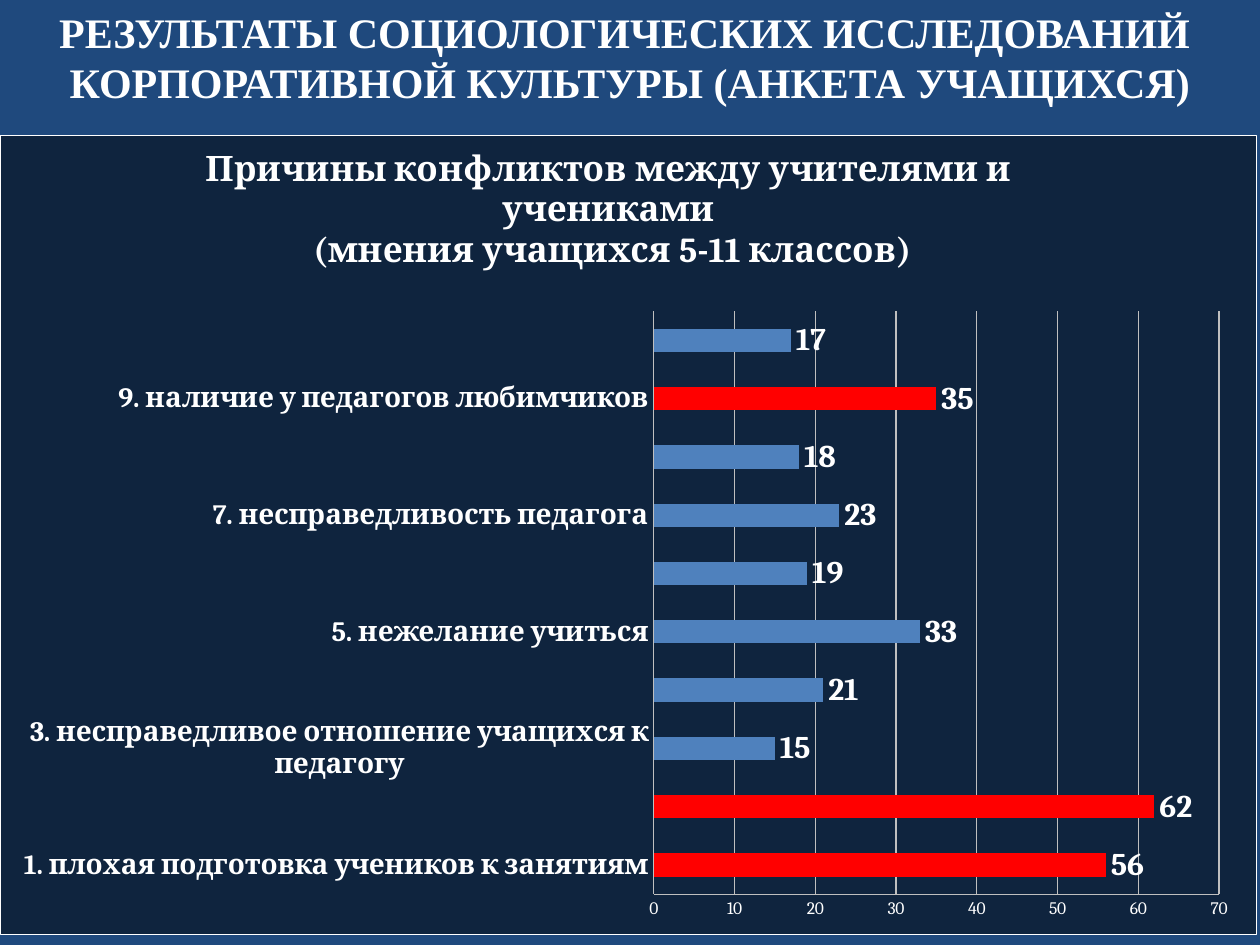
import lxml.etree
import pptx
import pptx.chart.data
import pptx.dml.color
import pptx.enum.chart
import pptx.enum.text
import pptx.oxml
import pptx.oxml.ns
import pptx.util

Inches = pptx.util.Inches
Pt = pptx.util.Pt
qn = pptx.oxml.ns.qn

COLORS = {
    "background": "1F497D",
    "panel": "0F243E",
    "text": "FFFFFF",
    "grid": "BFBFBF",
    "bar": "4F81BD",
    "highlight": "FF0000",
}
REASONS = [
    ("1. плохая подготовка учеников к занятиям", 56),
    ("", 62),
    ("3. несправедливое отношение учащихся к педагогу", 15),
    ("", 21),
    ("5. нежелание учиться", 33),
    ("", 19),
    ("7. несправедливость педагога", 23),
    ("", 18),
    ("9. наличие у педагогов любимчиков", 35),
    ("", 17),
]
HIGHLIGHT_FROM = 35


def rgb(name):
    """Return the named palette colour."""
    return pptx.dml.color.RGBColor.from_string(COLORS[name])


def format_font(font, size, face="Cambria", bold=False, color="text"):
    """Apply size, face, weight and colour to a font."""
    font.size = Pt(size)
    font.name = face
    font.bold = bold
    font.color.rgb = rgb(color)


def write_text(frame, lines, **font_format):
    """Write centred lines as paragraphs with one font format."""
    frame.clear()
    for index, line in enumerate(lines):
        paragraph = frame.paragraphs[0] if index == 0 else frame.add_paragraph()
        paragraph.alignment = pptx.enum.text.PP_ALIGN.CENTER
        run = paragraph.add_run()
        run.text = line
        format_font(run.font, **font_format)


def set_layout(parent, index, inner=False, **fractions):
    """Fix the place of a chart part as fractions of the chart."""
    for previous in parent.findall(qn("c:layout")):
        parent.remove(previous)
    layout = lxml.etree.Element(qn("c:layout"))
    manual = lxml.etree.SubElement(layout, qn("c:manualLayout"))
    settings = {"layoutTarget": "inner"} if inner else {}
    settings.update(xMode="edge", yMode="edge", **fractions)
    for tag, value in settings.items():
        lxml.etree.SubElement(manual, qn("c:" + tag)).set("val", str(value))
    parent.insert(index, layout)


def paint_panel(chart):
    """Give the chart area its fill and border."""
    namespaces = pptx.oxml.ns.nsdecls("c", "a")
    chart_space = chart.element
    panel = pptx.oxml.parse_xml(
        f"<c:spPr {namespaces}>"
        f'<a:solidFill><a:srgbClr val="{COLORS["panel"]}"/></a:solidFill>'
        f'<a:ln w="{Pt(0.75)}"><a:solidFill><a:srgbClr val="{COLORS["text"]}"/>'
        "</a:solidFill></a:ln></c:spPr>"
    )
    chart_space.find(qn("c:chart")).addnext(panel)


def format_axes(chart):
    """Format the reason axis and the value axis."""
    for axis, size, bold in (
        (chart.category_axis, 16, True),
        (chart.value_axis, 10, False),
    ):
        axis.major_tick_mark = pptx.enum.chart.XL_TICK_MARK.NONE
        axis.minor_tick_mark = pptx.enum.chart.XL_TICK_MARK.NONE
        axis.format.line.color.rgb = rgb("grid")
        format_font(axis.tick_labels.font, size, bold=bold)
    values = chart.value_axis
    values.minimum_scale, values.maximum_scale, values.major_unit = 0, 70, 10
    values.has_major_gridlines = True
    values.major_gridlines.format.line.color.rgb = rgb("grid")
    values.major_gridlines.format.line.width = Pt(0.75)
    values.tick_labels.number_format = "0"
    values.tick_labels.number_format_is_linked = False
    chart.category_axis.has_major_gridlines = False


def format_bars(plot):
    """Colour the bars and label them with their values."""
    plot.gap_width = 150
    plot.vary_by_categories = False
    series = plot.series[0]
    series.invert_if_negative = False
    series.format.fill.solid()
    series.format.fill.fore_color.rgb = rgb("bar")
    for index, (_, value) in enumerate(REASONS):
        if value >= HIGHLIGHT_FROM:
            fill = series.points[index].format.fill
            fill.solid()
            fill.fore_color.rgb = rgb("highlight")
    labels = series.data_labels
    labels.show_value = True
    labels.number_format = "0"
    labels.number_format_is_linked = False
    labels.position = pptx.enum.chart.XL_LABEL_POSITION.OUTSIDE_END
    format_font(labels.font, 18, bold=True)


def add_heading(slide, left, top, width, height):
    """Place the slide title in the given box."""
    heading = slide.shapes.title
    heading.left, heading.top = left, top
    heading.width, heading.height = width, height
    frame = heading.text_frame
    write_text(
        frame,
        ["РЕЗУЛЬТАТЫ СОЦИОЛОГИЧЕСКИХ ИССЛЕДОВАНИЙ ",
         "КОРПОРАТИВНОЙ КУЛЬТУРЫ (АНКЕТА УЧАЩИХСЯ)"],
        size=24, face="Times New Roman", bold=True,
    )
    frame.word_wrap = True
    frame.vertical_anchor = pptx.enum.text.MSO_ANCHOR.TOP
    frame.auto_size = pptx.enum.text.MSO_AUTO_SIZE.SHAPE_TO_FIT_TEXT


def add_reasons_chart(slide, left, top, width, height):
    """Draw the chart of conflict reasons in the given box."""
    reasons = pptx.chart.data.CategoryChartData(number_format="0")
    reasons.categories = [reason for reason, _ in REASONS]
    reasons.add_series("Series 1", [value for _, value in REASONS])
    chart = slide.shapes.add_chart(
        pptx.enum.chart.XL_CHART_TYPE.BAR_CLUSTERED,
        left, top, width, height, reasons,
    ).chart
    format_font(chart.font, 10)
    chart.has_legend = False
    chart.has_title = True
    write_text(
        chart.chart_title.text_frame,
        ["Причины конфликтов между учителями и учениками",
         " (мнения учащихся 5-11 классов)"],
        size=20, bold=True,
    )
    chart.chart_title.include_in_layout = False
    format_axes(chart)
    format_bars(chart.plots[0])
    paint_panel(chart)
    plot_area = chart.element.find(".//" + qn("c:plotArea"))
    set_layout(plot_area, 0, inner=True, x=0.52, y=0.22, w=0.45, h=0.73)
    title = chart.element.find(qn("c:chart")).find(qn("c:title"))
    set_layout(title, 1, x=0.16, y=0.01)


def main():
    """Build and save the survey slide."""
    deck = pptx.Presentation()
    deck.slide_width, deck.slide_height = Inches(10), Inches(7.5)
    slide = deck.slides.add_slide(deck.slide_layouts[5])
    slide.background.fill.solid()
    slide.background.fill.fore_color.rgb = rgb("background")
    add_heading(slide, Inches(0), Inches(0), Inches(10), Inches(0.91))
    add_reasons_chart(slide, Inches(0), Inches(1.07), Inches(9.98), Inches(6.35))
    deck.save("out.pptx")


if __name__ == "__main__":
    main()
